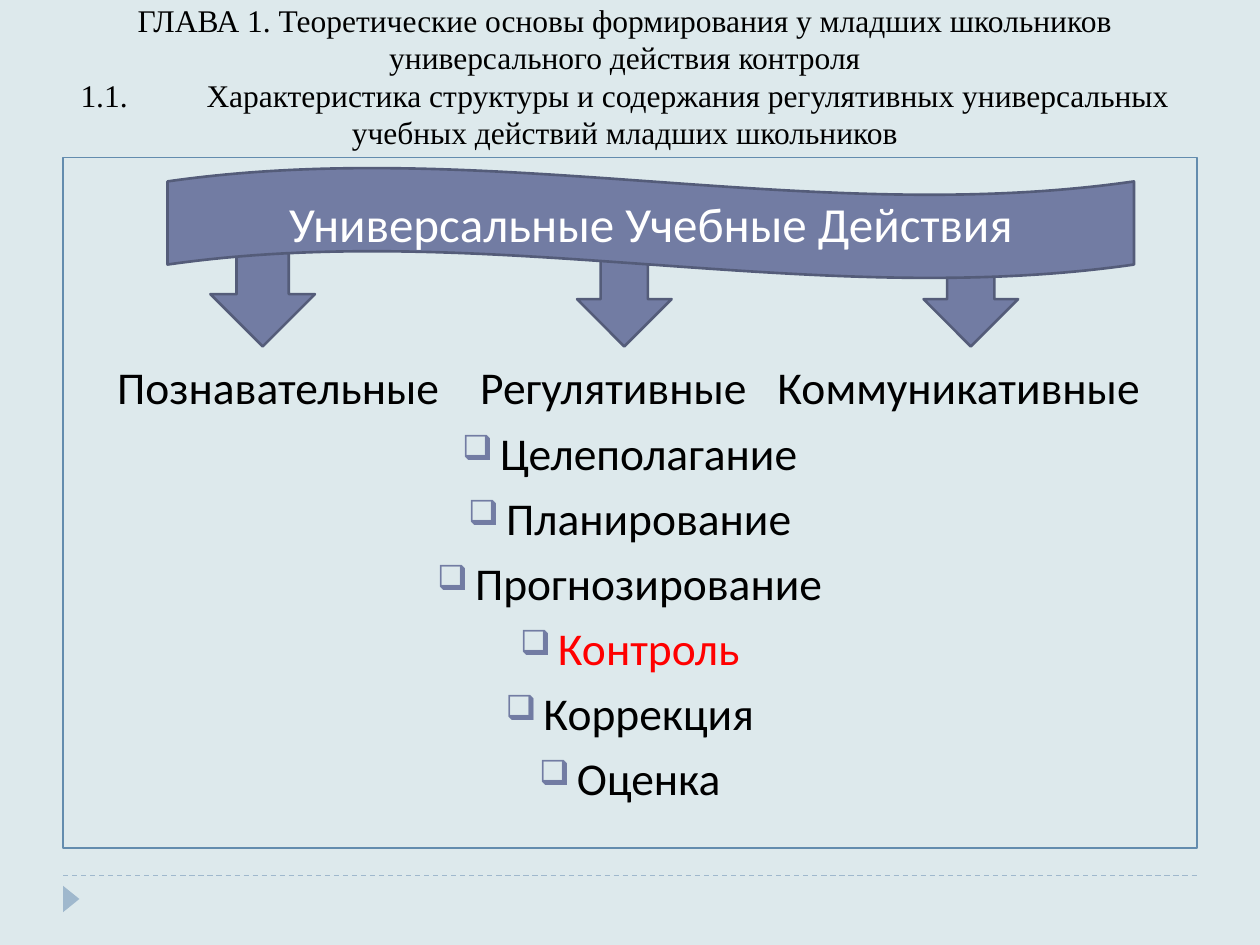
from dataclasses import dataclass

from pptx import Presentation
from pptx.dml.color import RGBColor
from pptx.enum.dml import MSO_LINE
from pptx.enum.shapes import MSO_CONNECTOR, MSO_SHAPE
from pptx.enum.text import MSO_ANCHOR, PP_ALIGN
from pptx.oxml.ns import qn
from pptx.util import Inches, Pt

DASH = MSO_LINE.DASH
STRAIGHT = MSO_CONNECTOR.STRAIGHT
ARROW = MSO_SHAPE.DOWN_ARROW
RECT = MSO_SHAPE.RECTANGLE
WAVE = MSO_SHAPE.WAVE
WEDGE = MSO_SHAPE.ISOSCELES_TRIANGLE
CENTER = PP_ALIGN.CENTER
TOP = MSO_ANCHOR.TOP
MIDDLE = MSO_ANCHOR.MIDDLE
BOTTOM = MSO_ANCHOR.BOTTOM

COLORS = {
    "back": "DDE9EC",
    "rule": "9FB8CD",
    "frame": "638CAE",
    "fill": "727CA3",
    "edge": "545C79",
    "text": "000000",
    "light": "FFFFFF",
    "mark": "FF0000",
}
SANS = "Calibri"
SERIF = "Times New Roman"


@dataclass
class Box:
    left: float
    top: float
    width: float
    height: float


@dataclass
class Branch:
    label: str
    middle: float
    arrow: Box


@dataclass
class Item:
    label: str
    color: str = "text"


BRANCHES = [
    Branch("Познавательные", 2.21, Box(1.67, 1.92, 0.83, 0.83)),
    Branch("Регулятивные", 4.87, Box(4.58, 1.92, 0.75, 0.83)),
    Branch("Коммуникативные", 7.61, Box(7.33, 1.92, 0.75, 0.83)),
]
ITEMS = [
    Item("Целеполагание"),
    Item("Планирование"),
    Item("Прогнозирование"),
    Item("Контроль", "mark"),
    Item("Коррекция"),
    Item("Оценка"),
]
TITLE = [
    "ГЛАВА 1. Теоретические основы формирования у младших школьников "
    "универсального действия контроля",
    "1.1.\tХарактеристика структуры и содержания регулятивных "
    "универсальных учебных действий младших школьников",
]


def tint(name: str) -> RGBColor:
    return RGBColor.from_string(COLORS[name])


def place(box: Box) -> list:
    return [Inches(n) for n in (box.left, box.top, box.width, box.height)]


def add_rule(slide, top: float) -> None:
    line = slide.shapes.add_connector(
        STRAIGHT, Inches(0.5), Inches(top), Inches(9.5), Inches(top))
    line.line.color.rgb = tint("rule")
    line.line.width = Pt(0.75)
    line.line.dash_style = DASH
    props = line._element.spPr
    props.append(props.makeelement(qn("a:effectLst"), {}))


def add_form(slide, kind, box: Box, fill: str = "", edge: str = "", width: float = 1.5):
    form = slide.shapes.add_shape(kind, *place(box))
    form.shadow.inherit = False
    if fill:
        form.fill.solid()
        form.fill.fore_color.rgb = tint(fill)
    else:
        form.fill.background()
    if edge:
        form.line.color.rgb = tint(edge)
        form.line.width = Pt(width)
    else:
        form.line.fill.background()
    return form


def set_frame(shape, anchor):
    frame = shape.text_frame
    frame.word_wrap = True
    frame.vertical_anchor = anchor
    frame.paragraphs[0].alignment = CENTER
    return frame


def add_run(para, text: str, size: float, font: str, color: str) -> None:
    run = para.add_run()
    run.text = text
    run.font.size = Pt(size)
    run.font.name = font
    run.font.color.rgb = tint(color)


def add_bullet(para) -> None:
    props = para._p.get_or_add_pPr()
    props.set("marL", str(Inches(0.3)))
    props.set("indent", str(-Inches(0.3)))
    shade = props.makeelement(qn("a:buClr"), {})
    shade.append(shade.makeelement(qn("a:srgbClr"), {"val": COLORS["fill"]}))
    props.append(shade)
    props.append(props.makeelement(qn("a:buSzPct"), {"val": "76000"}))
    props.append(props.makeelement(qn("a:buChar"), {"char": "❑"}))


def add_tab(para, inches: float) -> None:
    props = para._p.get_or_add_pPr()
    stops = props.makeelement(qn("a:tabLst"), {})
    stops.append(stops.makeelement(
        qn("a:tab"), {"pos": str(Inches(inches)), "algn": "l"}))
    props.append(stops)


def add_title(slide) -> None:
    shape = slide.shapes.add_textbox(*place(Box(0.46, 0.08, 9, 1.17)))
    para = set_frame(shape, BOTTOM).paragraphs[0]
    para.line_spacing = Pt(21.5)
    add_tab(para, 1)
    for index, text in enumerate(TITLE):
        if index:
            para.add_line_break()
        add_run(para, text, 18, SERIF, "text")


def add_list(slide) -> None:
    shape = add_form(slide, RECT, Box(0.5, 1.25, 9, 5.48), edge="frame", width=0.75)
    frame = set_frame(shape, TOP)
    frame.margin_top = Inches(2.12)
    for index, item in enumerate(ITEMS):
        para = frame.add_paragraph() if index else frame.paragraphs[0]
        para.alignment = CENTER
        para.space_before = Pt(6 if index else 0)
        add_bullet(para)
        add_run(para, item.label, 26, SANS, item.color)


def add_branch(slide, branch: Branch) -> None:
    add_form(slide, ARROW, branch.arrow, "fill", "edge")
    shape = slide.shapes.add_textbox(*place(Box(branch.middle - 1.6, 2.85, 3.2, 0.45)))
    frame = set_frame(shape, TOP)
    frame.margin_top = frame.margin_bottom = 0
    frame.margin_left = frame.margin_right = 0
    add_run(frame.paragraphs[0], branch.label, 26, SANS, "text")


def main() -> None:
    deck = Presentation()
    deck.slide_width = Inches(10)
    deck.slide_height = Inches(7.5)
    slide = deck.slides.add_slide(deck.slide_layouts[6])
    slide.background.fill.solid()
    slide.background.fill.fore_color.rgb = tint("back")
    for top in (6.95, 1.25):
        add_rule(slide, top)
    wedge = add_form(slide, WEDGE, Box(0.46, 7.07, 0.21, 0.13), "rule")
    wedge.rotation = 90
    add_title(slide)
    add_list(slide)
    for branch in BRANCHES:
        add_branch(slide, branch)
    wave = add_form(slide, WAVE, Box(1.33, 1.33, 7.67, 0.88), "fill", "edge")
    para = set_frame(wave, MIDDLE).paragraphs[0]
    add_run(para, "Универсальные Учебные Действия", 28, SANS, "light")
    deck.save("out.pptx")


if __name__ == "__main__":
    main()
